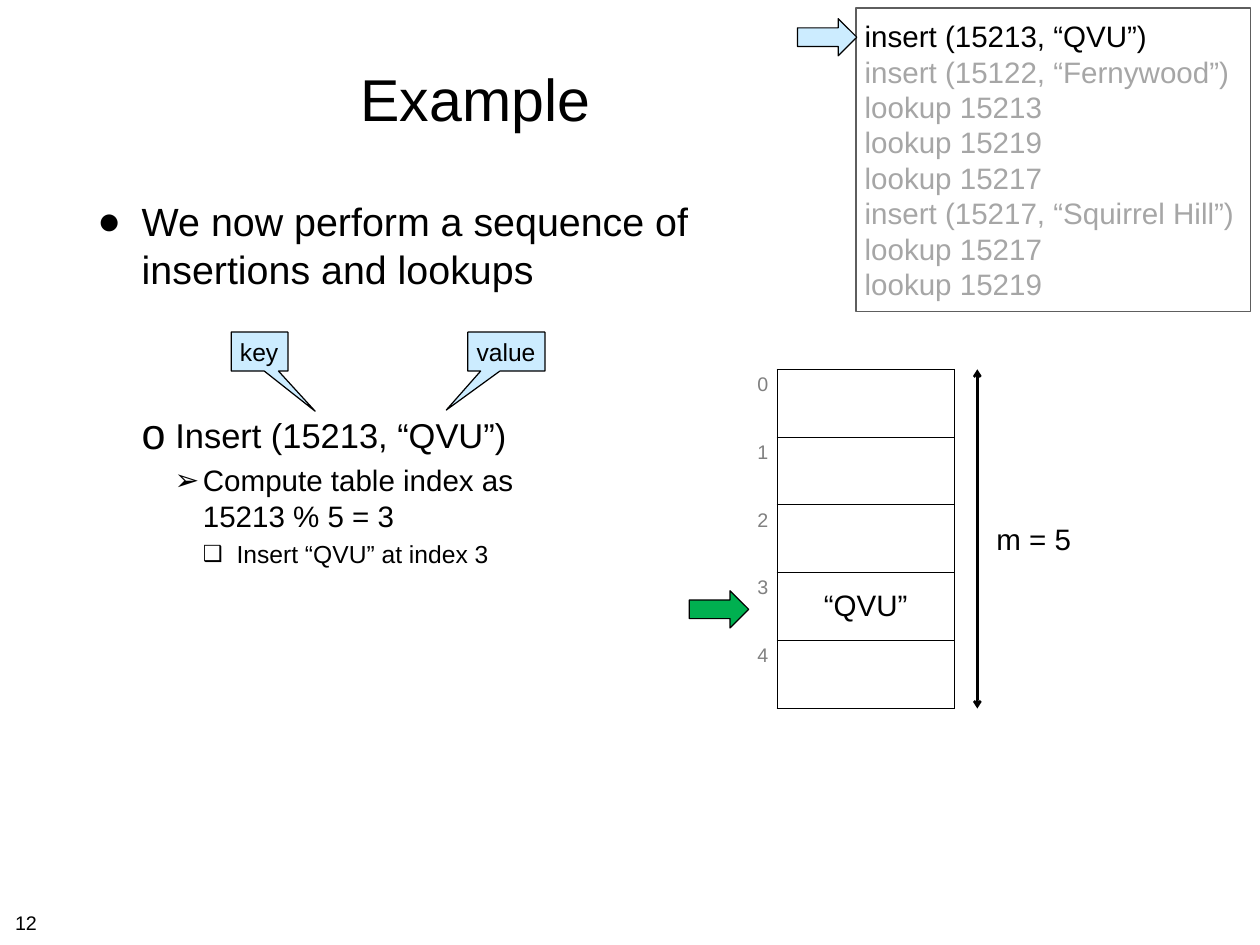
from lxml import etree
from pptx import Presentation
from pptx import util as u
from pptx.dml.color import RGBColor
from pptx.enum import shapes, text
from pptx.oxml import ns

PX = 9144
LEADING = 1.2
COLORS = {"black": "000000", "past": "A6A6A6", "index": "808080",
          "frame": "5E5E5E", "sky": "CCECFF", "green": "00B050"}
OPERATIONS = ["insert (15213, “QVU”)", "insert (15122, “Fernywood”)",
              "lookup 15213", "lookup 15219", "lookup 15217",
              "insert (15217, “Squirrel Hill”)",
              "lookup 15217", "lookup 15219"]
OUTLINE = [
    ("We now perform a sequence of\vinsertions and lookups", 32, 8, 50, 50, "●", 100),
    ("Insert (15213, “QVU”)", 28, 99, 88, 38, "o", 125),
    ("Compute table index as\v15213 % 5 = 3", 24, 6, 119, 32, "➢", 100),
    ("Insert “QVU” at index 3", 20, 4.8, 157, 38, "❑", 90),
]
BUCKETS = ["", "", "", "“QVU”", ""]
LEFT, CENTER, RIGHT = text.PP_ALIGN.LEFT, text.PP_ALIGN.CENTER, text.PP_ALIGN.RIGHT
TOP, MIDDLE = text.MSO_ANCHOR.TOP, text.MSO_ANCHOR.MIDDLE


def px(*lengths):
    return [u.Emu(n * PX) for n in lengths]


def rgb(name):
    return RGBColor.from_string(COLORS[name])


def sub(parent, tag, **attrs):
    return etree.SubElement(parent, ns.qn(tag), attrs)


def write(p, words, size, color="black", align=LEFT):
    p.text = words
    p.alignment = align
    for r in p.runs:
        for name, value in {"name": "Arial", "size": u.Pt(size), "bold": False}.items():
            setattr(r.font, name, value)
        r.font.color.rgb = rgb(color)


def frame(tf, anchor=TOP, wrap=False, inset=(10, 5)):
    x, y = px(*inset)
    settings = {"word_wrap": wrap, "vertical_anchor": anchor,
                "auto_size": text.MSO_AUTO_SIZE.NONE, "margin_left": x,
                "margin_right": x, "margin_top": y, "margin_bottom": y}
    for name, value in settings.items():
        setattr(tf, name, value)
    return tf


def paragraphs(tf, count):
    return [tf.paragraphs[0]] + [tf.add_paragraph() for _ in range(count - 1)]


def add_title(s, words, box):
    sp = s.shapes.title
    sp.left, sp.top, sp.width, sp.height = px(*box)
    tf = frame(sp.text_frame, MIDDLE, True, (6, 6))
    write(tf.paragraphs[0], words, 48, align=CENTER)


def add_label(s, words, size, box, align=LEFT, inset=(10, 5)):
    tf = frame(s.shapes.add_textbox(*px(*box)).text_frame, inset=inset)
    write(tf.paragraphs[0], words, size, align=align)


def add_outline(s, box):
    tf = frame(s.shapes.add_textbox(*px(*box)).text_frame, wrap=True, inset=(6, 6))
    for p, item in zip(paragraphs(tf, len(OUTLINE)), OUTLINE):
        words, size, before, margin, hang, bullet, scale = item
        write(p, words, size)
        p.space_before = u.Pt(before)
        p.line_spacing = u.Pt(size * LEADING)
        pPr = p._p.get_or_add_pPr()
        pPr.set("marL", str(margin * PX))
        pPr.set("indent", str(-hang * PX))
        sub(pPr, "a:buSzPct", val=str(scale * 1000))
        sub(pPr, "a:buFont", typeface="Arial")
        sub(pPr, "a:buChar", char=bullet)


def add_shape(s, kind, box, fill=None, line="black", adjust=()):
    sp = s.shapes.add_shape(kind, *px(*box))
    sp.shadow.inherit = False
    if fill:
        sp.fill.solid()
        sp.fill.fore_color.rgb = rgb(fill)
    else:
        sp.fill.background()
    sp.line.color.rgb = rgb(line)
    sp.line.width = u.Pt(1)
    for i, value in enumerate(adjust):
        sp.adjustments[i] = value
    return sp


def add_operations(s, box):
    sp = add_shape(s, shapes.MSO_SHAPE.RECTANGLE, box, line="frame")
    tf = frame(sp.text_frame, MIDDLE, inset=(10, 10))
    for i, (p, words) in enumerate(zip(paragraphs(tf, len(OPERATIONS)), OPERATIONS)):
        write(p, words, 24, "past" if i else "black")
        p.line_spacing = u.Pt(24 * LEADING)


def add_callout(s, words, box, tip):
    sp = add_shape(s, shapes.MSO_SHAPE.RECTANGULAR_CALLOUT, box, "sky", adjust=tip)
    write(frame(sp.text_frame, MIDDLE).paragraphs[0], words, 20)


def add_pointer(s, left, top, fill):
    add_shape(s, shapes.MSO_SHAPE.RIGHT_ARROW, (left, top, 67, 42), fill)


def add_span(s, x, top, bottom):
    c = s.shapes.add_connector(shapes.MSO_CONNECTOR.STRAIGHT, *px(x, top, x, bottom))
    c.line.color.rgb = rgb("black")
    c.line.width = u.Pt(2)
    ln = c.line._get_or_add_ln()
    for end in ("a:headEnd", "a:tailEnd"):
        sub(ln, end, type="arrow")
    sub(c._element.spPr, "a:effectLst")


def border(cell, sides):
    tcPr = cell._tc.get_or_add_tcPr()
    for i, side in enumerate(sides):
        ln = etree.Element(ns.qn("a:ln" + side), w=str(u.Pt(1)))
        sub(sub(ln, "a:solidFill"), "a:srgbClr", val=COLORS["black"])
        tcPr.insert(i, ln)


def add_buckets(s, box):
    table = s.shapes.add_table(len(BUCKETS), 2, *px(*box)).table
    table.first_row = table.horz_banding = False
    for column, width in zip(table.columns, px(33, 200)):
        column.width = width
    for i, value in enumerate(BUCKETS):
        index, bucket = table.cell(i, 0), table.cell(i, 1)
        write(index.text_frame.paragraphs[0], str(i), 16, "index", RIGHT)
        write(bucket.text_frame.paragraphs[0], value, 24, align=CENTER)
        bucket.vertical_anchor = MIDDLE
        for cell, sides in ((index, "R"), (bucket, "LRTB")):
            cell.fill.background()
            border(cell, sides)


def main():
    prs = Presentation()
    prs.slide_width, prs.slide_height = px(1422, 1067)
    s = prs.slides.add_slide(prs.slide_layouts[5])
    add_title(s, "Example", (104, 28, 865, 164))
    add_outline(s, (104, 217, 1214, 754))
    add_operations(s, (966, 9, 445, 343))
    add_pointer(s, 900, 21, "sky")
    add_span(s, 1103, 417, 800)
    add_label(s, "m = 5", 24, (1114, 583, 105, 50), CENTER)
    add_callout(s, "key", (261, 375, 64, 44), (0.98, 1.53))
    add_callout(s, "value", (528, 375, 87, 44), (-0.78, 1.5))
    add_buckets(s, (844, 417, 233, 383))
    add_pointer(s, 778, 667, "green")
    add_label(s, "12", 16, (11, 1023, 37, 35), inset=(6, 6))
    prs.save("out.pptx")


if __name__ == "__main__":
    main()
